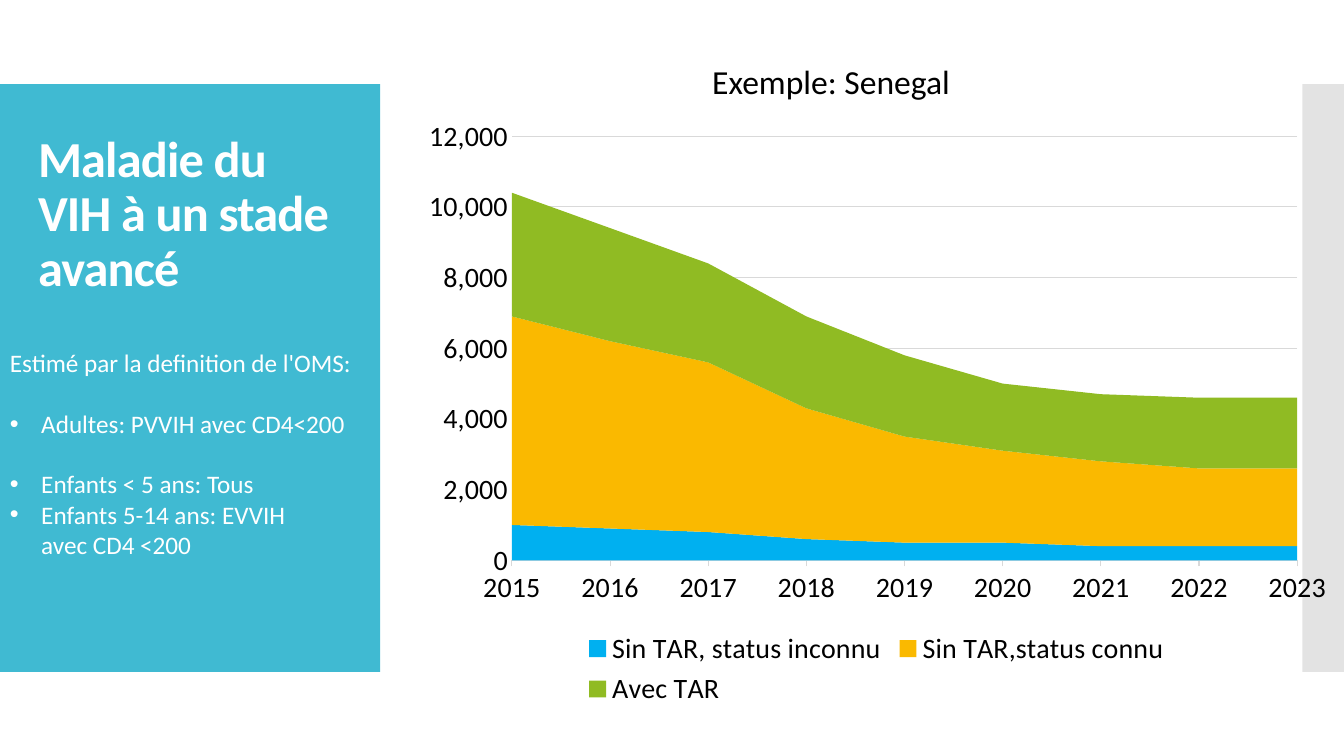
from lxml.etree import SubElement
from pptx import Presentation
from pptx.chart.data import CategoryChartData
from pptx.dml.color import RGBColor
from pptx.enum.chart import XL_CHART_TYPE, XL_LEGEND_POSITION, XL_TICK_MARK
from pptx.enum.shapes import MSO_SHAPE
from pptx.enum.text import MSO_ANCHOR
from pptx.oxml.ns import qn
from pptx.util import Cm, Pt

WHITE = RGBColor(0xFF, 0xFF, 0xFF)
BLACK = RGBColor(0, 0, 0)
TEAL = RGBColor(0x40, 0xBA, 0xD2)
SILVER = RGBColor(0xC8, 0xC8, 0xC8)
GRID = RGBColor(0xD9, 0xD9, 0xD9)
BLUE = RGBColor(0, 0xB0, 0xF0)
AMBER = RGBColor(0xFA, 0xB9, 0)
GREEN = RGBColor(0x90, 0xBB, 0x23)

YEARS = [str(year) for year in range(2015, 2024)]
SERIES = [
    ("Sin TAR, status inconnu", BLUE, (1000, 900, 800, 600, 500, 500, 400, 400, 400)),
    ("Sin TAR,status connu", AMBER, (5900, 5300, 4800, 3700, 3000, 2600, 2400, 2200, 2200)),
    ("Avec TAR", GREEN, (3500, 3200, 2800, 2600, 2300, 1900, 1900, 2000, 2000)),
]
PLOT_LAYOUT = {"x": 0.11, "y": 0.05, "w": 0.84, "h": 0.7}


def set_font(font, size, color, bold=False):
    font.name = "Calibri"
    font.size = Pt(size)
    font.bold = bold
    font.color.rgb = color


def add_panel(page, left, width, color, opacity=100):
    panel = page.shapes.add_shape(MSO_SHAPE.RECTANGLE, Cm(left), Cm(2.12), Cm(width), Cm(14.81))
    panel.shadow.inherit = False
    panel.fill.solid()
    panel.fill.fore_color.rgb = color
    panel.line.fill.background()
    if opacity < 100:
        tint = panel.fill._xPr.find(".//" + qn("a:srgbClr"))
        SubElement(tint, qn("a:alpha"), val=str(opacity * 1000))


def add_text_box(page, left, top, width, height, anchor=MSO_ANCHOR.TOP):
    box = page.shapes.add_textbox(Cm(left), Cm(top), Cm(width), Cm(height))
    box.text_frame.word_wrap = True
    box.text_frame.vertical_anchor = anchor
    return box


def add_text(box, text, size=18, color=WHITE, bold=False, bullet=False,
             after=0, line_spacing=None, tracking=None):
    frame = box.text_frame
    para = frame.add_paragraph() if frame.text else frame.paragraphs[0]
    para.text = text
    para.space_after = Pt(after)
    para.line_spacing = line_spacing
    if bullet:
        properties = para._p.get_or_add_pPr()
        properties.set("marL", str(Cm(0.79)))
        properties.set("indent", str(-Cm(0.79)))
        SubElement(properties, qn("a:buFont"), typeface="Arial")
        SubElement(properties, qn("a:buChar"), char="•")
    for span in para.runs:
        set_font(span.font, size, color, bold)
        if tracking:
            span.font._element.set("spc", str(tracking))


def place_plot(chart):
    plot_area = chart._chartSpace.chart.plotArea
    layout = plot_area.find(qn("c:layout"))
    if layout is None:
        layout = SubElement(plot_area, qn("c:layout"))
        plot_area.insert(0, layout)
    manual = SubElement(layout, qn("c:manualLayout"))
    SubElement(manual, qn("c:layoutTarget"), val="inner")
    for side in "xy":
        SubElement(manual, qn(f"c:{side}Mode"), val="edge")
    for name, share in PLOT_LAYOUT.items():
        SubElement(manual, qn(f"c:{name}"), val=str(share))
    plot_area.find(".//" + qn("c:crossBetween")).set("val", "midCat")


def style_axes(chart):
    years, people = chart.category_axis, chart.value_axis
    for axis in (years, people):
        set_font(axis.tick_labels.font, 20, BLACK)
        axis.minor_tick_mark = XL_TICK_MARK.NONE
    years.has_major_gridlines = False
    years.major_tick_mark = XL_TICK_MARK.OUTSIDE
    people.major_tick_mark = XL_TICK_MARK.NONE
    people.has_major_gridlines = True
    people.minimum_scale, people.maximum_scale, people.major_unit = 0, 12000, 2000
    people.tick_labels.number_format = "#,##0"
    people.tick_labels.number_format_is_linked = False
    people.format.line.fill.background()
    for line in (years.format.line, people.major_gridlines.format.line):
        line.color.rgb = GRID
        line.width = Pt(0.75)


def add_area_chart(page):
    data = CategoryChartData(number_format="#,##0")
    data.categories = YEARS
    for name, _, values in SERIES:
        data.add_series(name, values)
    chart = page.shapes.add_chart(
        XL_CHART_TYPE.AREA_STACKED, Cm(10.31), Cm(2.67), Cm(23.56), Cm(15.27), data).chart
    set_font(chart.font, 20, BLACK)
    chart.has_title = False
    chart.has_legend = True
    chart.legend.position = XL_LEGEND_POSITION.BOTTOM
    chart.legend.include_in_layout = False
    set_font(chart.legend.font, 20, BLACK)
    chart.plots[0].vary_by_categories = False
    for series, (_, color, _) in zip(chart.plots[0].series, SERIES):
        series.format.fill.solid()
        series.format.fill.fore_color.rgb = color
        series.format.line.fill.background()
    style_axes(chart)
    place_plot(chart)


def main():
    deck = Presentation()
    deck.slide_width, deck.slide_height = Cm(33.87), Cm(19.05)
    page = deck.slides.add_slide(deck.slide_layouts[6])

    add_panel(page, 0, 9.58, TEAL)
    add_panel(page, 32.82, 1.05, SILVER, opacity=50)

    title = add_text_box(page, 0.71, 3.12, 8.18, 4.62, MSO_ANCHOR.MIDDLE)
    add_text(title, "Maladie du VIH à un stade avancé", size=36, bold=True,
             line_spacing=0.9, tracking=-60)

    definition = add_text_box(page, 0, 8.64, 9.42, 7.19)
    add_text(definition, "Estimé par la definition de l'OMS:", after=21.6)
    add_text(definition, "Adultes: PVVIH avec CD4<200", bullet=True, after=21.6)
    add_text(definition, "Enfants < 5 ans: Tous", bullet=True)
    add_text(definition, "Enfants 5-14 ans: EVVIH\vavec CD4 <200", bullet=True)

    add_area_chart(page)
    heading = add_text_box(page, 17.7, 1.4, 10.19, 1.27)
    add_text(heading, "Exemple: Senegal", size=24, color=BLACK)
    deck.save("out.pptx")


if __name__ == "__main__":
    main()
